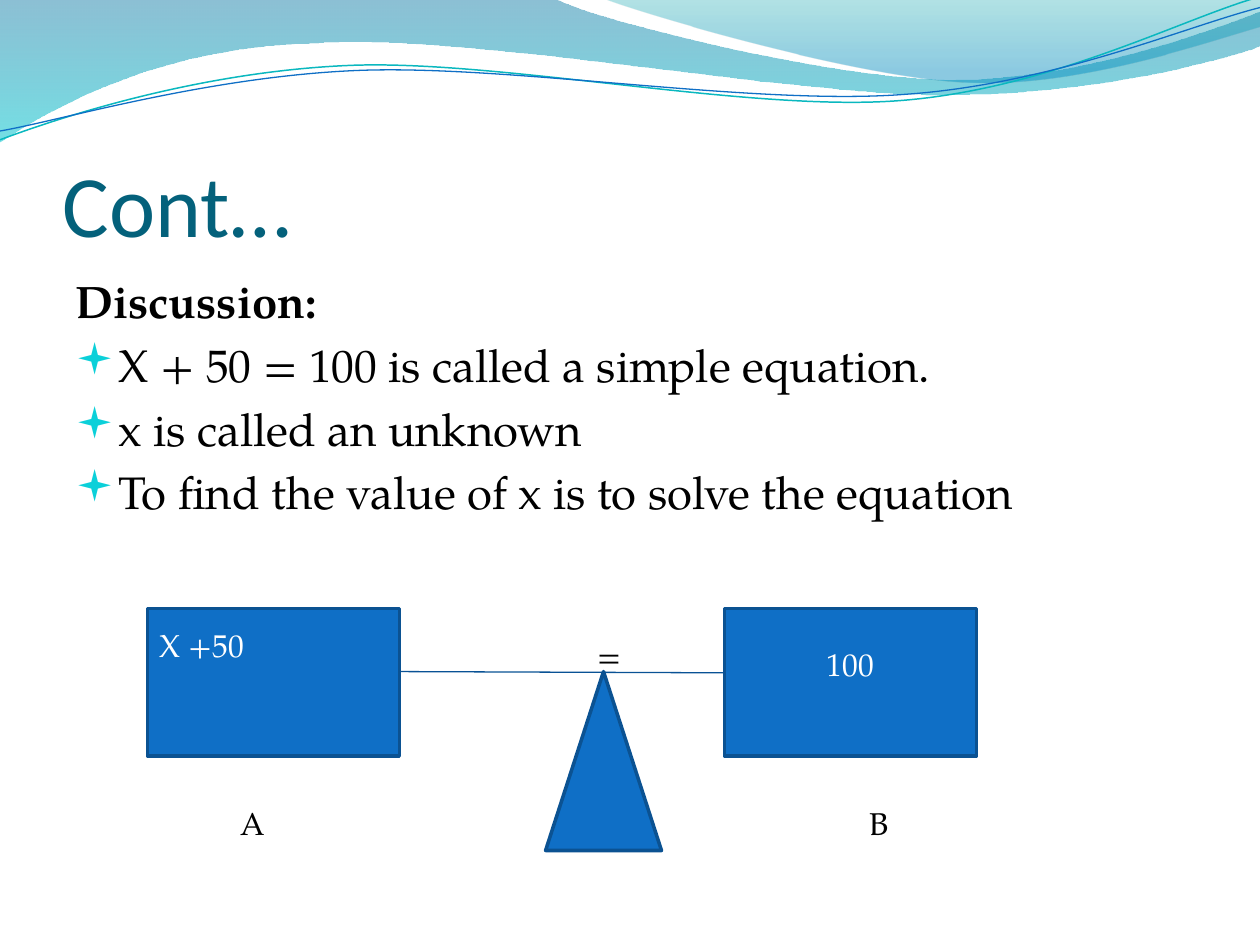
import pptx
import pptx.util
import pptx.dml.color
import pptx.enum.shapes
import pptx.enum.text
import pptx.oxml.ns
from lxml import etree

RGBColor = pptx.dml.color.RGBColor
Pt = pptx.util.Pt
ALIGN = pptx.enum.text.PP_ALIGN
ANCHOR = pptx.enum.text.MSO_ANCHOR
SHAPE = pptx.enum.shapes.MSO_SHAPE
qn = pptx.oxml.ns.qn

BLUE = RGBColor(0x0F, 0x6F, 0xC6)
EDGE = RGBColor(0x0B, 0x52, 0x92)
BEAM = RGBColor(0x09, 0x52, 0x95)
TEAL = RGBColor(0x0A, 0xB8, 0xBF)
TITLE = RGBColor(0x04, 0x61, 0x7B)
BULLET = RGBColor(0x0B, 0xD0, 0xD9)
BLACK = RGBColor(0, 0, 0)
WHITE = RGBColor(255, 255, 255)
SERIF = "TeX Gyre Pagella"

# Content; all places are in inches
HEADING = "Cont…"
DISCUSSION = [
    ("Discussion:", True),
    ("X + 50 = 100 is called a simple equation.", False),
    ("x is called an unknown", False),
    ("To find the value of x is to solve the equation", False),
]
# text, left, top inset, alignment
PANS = [("X +50", 1.17, 0.14, ALIGN.LEFT), ("100", 5.75, 0.29, ALIGN.CENTER)]
# text, centre, top
LABELS = [("=", 4.84, 5), ("A", 2.01, 6.33), ("B", 6.98, 6.33)]

# Waves: a pair is a straight step, six numbers are a Bezier curve.
# Gradient stops are position, colour, opacity in percent.
FILLED_WAVES = [
    ([(0, 0), (4.4, -0.01), (4.76, 0.17, 6.64, 0.63, 7.58, 0.63),
      (8.53, 0.63, 9.58, 0.26, 10, 0.09), (10.01, 0.36),
      (9.83, 0.44, 8.7, 0.76, 7.46, 0.75), (6.22, 0.75, 3.82, 0.28, 2.57, 0.34),
      (1.29, 0.36, 0.46, 0.83, -0.01, 1.13), (0, 0)],
     [(0, RGBColor(0, 0x74, 0xA1), 45), (1, RGBColor(0, 0xC6, 0xCF), 55)]),
    ([(4.79, -0.01), (5.09, 0.11, 6.82, 0.62, 7.69, 0.65),
      (8.56, 0.69, 9.61, 0.32, 10, 0.21), (10, 0), (4.79, -0.01)],
     [(0, RGBColor(0, 0xA1, 0xA9), 30), (0.8, RGBColor(0, 0x8B, 0xBF), 45)]),
]
LINE_WAVES = [
    ([(0, 1.11), (0.48, 0.93, 1.58, 0.57, 2.77, 0.52),
      (3.95, 0.47, 5.93, 0.89, 7.13, 0.8), (8.33, 0.71, 9.38, 0.15, 9.98, -0.02)],
     TEAL, 0.85),
    ([(0, 1.04), (0.47, 0.96, 1.64, 0.61, 2.83, 0.56),
      (4.03, 0.51, 5.97, 0.84, 7.17, 0.75), (8.36, 0.67, 9.41, 0.21, 10, 0.06)],
     BLUE, 0.75),
]


def inch(value):
    return pptx.util.Cm(value * 2.54)


def add_wave(page, steps, close):
    """Draw the outline through all points, then join threes into curves."""
    points = [(inch(step[i]), inch(step[i + 1]))
              for step in steps for i in range(0, len(step), 2)]
    builder = page.shapes.build_freeform(*points[0])
    builder.add_line_segments(points[1:], close=close)
    wave = builder.convert_to_shape()
    segments = iter(list(wave._element.spPr.iter(qn("a:lnTo"))))
    for step in steps[1:]:
        first = next(segments)
        if len(step) == 6:
            first.tag = qn("a:cubicBezTo")
            for _ in range(2):
                segment = next(segments)
                first.append(segment[0])
                segment.getparent().remove(segment)
    wave.shadow.inherit = False
    return wave


def add_solid(page, kind, left, top, width, height):
    solid = page.shapes.add_shape(kind, inch(left), inch(top), inch(width), inch(height))
    solid.shadow.inherit = False
    solid.fill.solid()
    solid.fill.fore_color.rgb = BLUE
    solid.line.color.rgb = EDGE
    solid.line.width = Pt(2)
    return solid


def add_box(page, left, top, width, height):
    box = page.shapes.add_textbox(inch(left), inch(top), inch(width), inch(height))
    box.text_frame.word_wrap = True
    return box.text_frame


def write(para, text, size, color, font=SERIF, bold=False, align=ALIGN.LEFT):
    para.alignment = align
    span = para.add_run()
    span.text = text
    span.font.size = Pt(size)
    span.font.name = font
    span.font.bold = bold
    span.font.color.rgb = color


def add_bullet(para):
    properties = para._p.get_or_add_pPr()
    properties.set("marL", str(inch(0.3)))
    properties.set("indent", str(inch(-0.3)))
    color = etree.SubElement(properties, qn("a:buClr"))
    etree.SubElement(color, qn("a:srgbClr"), val=str(BULLET))
    etree.SubElement(properties, qn("a:buSzPct"), val="95000")
    etree.SubElement(properties, qn("a:buFont"), typeface="Wingdings")
    etree.SubElement(properties, qn("a:buChar"), char="▪")


def main():
    deck = pptx.Presentation()
    deck.slide_width, deck.slide_height = inch(10), inch(7.5)
    page = deck.slides.add_slide(deck.slide_layouts[6])

    # Waves along the top
    for steps, stops in FILLED_WAVES:
        wave = add_wave(page, steps, True)
        wave.line.fill.background()
        wave.fill.gradient()
        wave.fill.gradient_angle = 270
        for stop, (position, color, _) in zip(wave.fill.gradient_stops, stops):
            stop.position = position
            stop.color.rgb = color
        colors = wave._element.spPr.iter(qn("a:srgbClr"))
        for color, (_, _, opacity) in zip(colors, stops):
            etree.SubElement(color, qn("a:alpha"), val=str(opacity * 1000))
    for steps, color, width in LINE_WAVES:
        wave = add_wave(page, steps, False)
        wave.fill.background()
        wave.line.color.rgb = color
        wave.line.width = Pt(width)

    # Title
    frame = add_box(page, 0.5, 0.77, 9, 1.25)
    frame.vertical_anchor = ANCHOR.BOTTOM
    frame.margin_left = frame.margin_right = frame.margin_bottom = 0
    write(frame.paragraphs[0], HEADING, 50, TITLE, font="Calibri")

    # Discussion
    frame = add_box(page, 0.5, 2.12, 9, 4.8)
    for i, (text, is_heading) in enumerate(DISCUSSION):
        para = frame.add_paragraph() if i else frame.paragraphs[0]
        para.space_before = Pt(5.2)
        write(para, text, 26, BLACK, bold=is_heading)
        if not is_heading:
            add_bullet(para)

    # Balance: pans, beam and pivot
    for text, left, inset, align in PANS:
        frame = add_solid(page, SHAPE.RECTANGLE, left, 4.83, 2, 1.17).text_frame
        frame.word_wrap = True
        frame.vertical_anchor = ANCHOR.TOP
        frame.margin_top = inch(inset)
        write(frame.paragraphs[0], text, 18, WHITE, align=align)
    beam = page.shapes.add_connector(pptx.enum.shapes.MSO_CONNECTOR.STRAIGHT,
                                     inch(3.17), inch(5.33), inch(5.75), inch(5.34))
    beam.line.color.rgb = BEAM
    beam.line.width = Pt(0.75)
    etree.SubElement(beam._element.spPr, qn("a:effectLst"))
    add_solid(page, SHAPE.ISOSCELES_TRIANGLE, 4.33, 5.33, 0.92, 1.42)

    # Labels
    for text, centre, top in LABELS:
        frame = add_box(page, centre - 0.25, top, 0.5, 0.4)
        write(frame.paragraphs[0], text, 18, BLACK, align=ALIGN.CENTER)

    deck.save("out.pptx")


if __name__ == "__main__":
    main()
